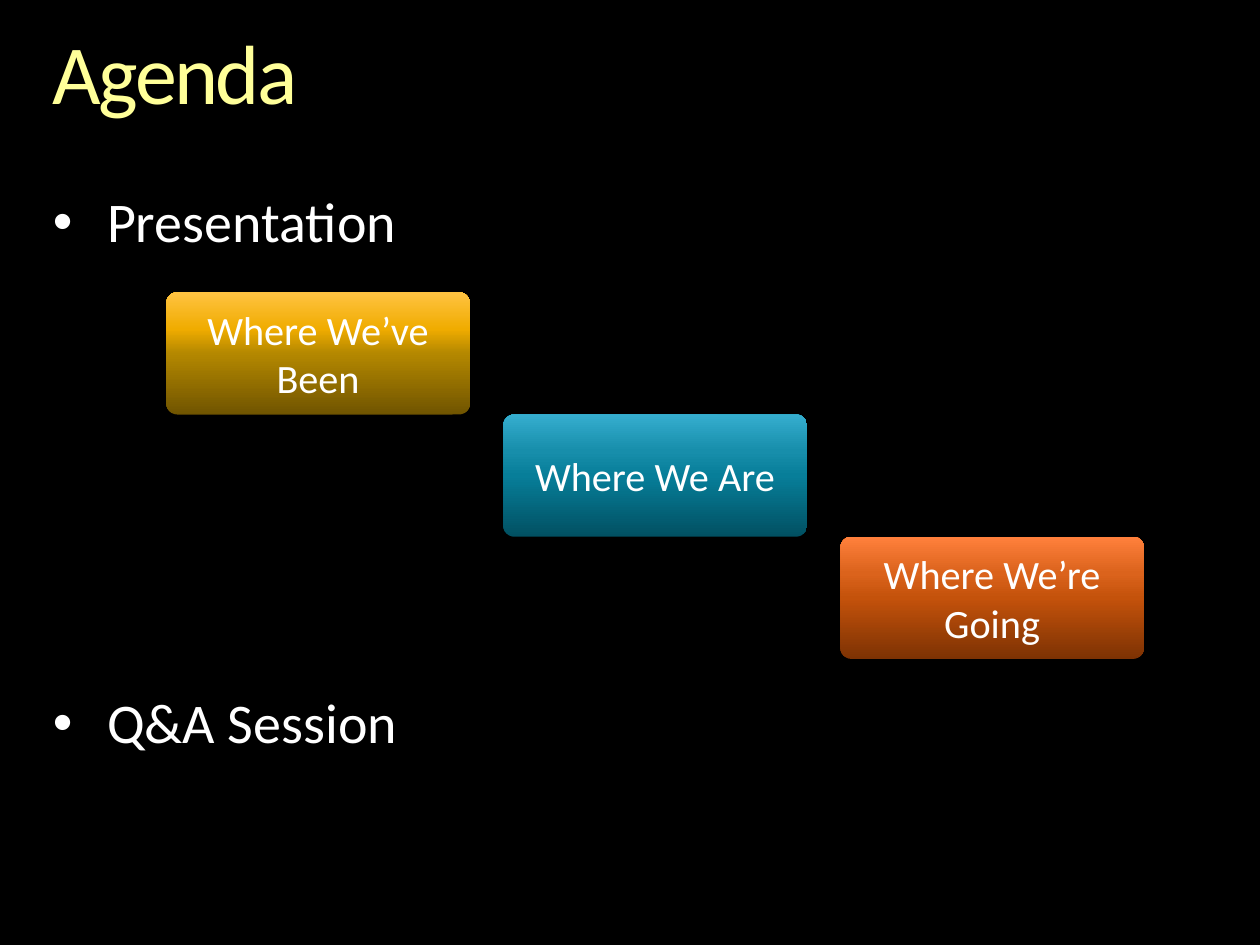
from copy import deepcopy

from pptx import Presentation
from pptx.dml.color import RGBColor
from pptx.enum.shapes import MSO_SHAPE
from pptx.enum.text import MSO_ANCHOR, MSO_AUTO_SIZE, PP_ALIGN
from pptx.oxml.ns import qn
from pptx.util import Inches, Pt

ROUNDED = MSO_SHAPE.ROUNDED_RECTANGLE
TOP, MIDDLE = MSO_ANCHOR.TOP, MSO_ANCHOR.MIDDLE
LEFT, CENTER = PP_ALIGN.LEFT, PP_ALIGN.CENTER
NO_FIT = MSO_AUTO_SIZE.NONE

FONT = "Calibri"
COLORS = {"background": "000000", "title": "FFFF99", "text": "FFFFFF"}

TITLE = "Agenda"
TOPICS = [("Presentation", 0), ("Q&A Session", 252)]  # text, space before in points
STEPS = [  # text, gradient from bottom to top
    ("Where We’ve Been", ("705400", "B48800", "F0AC00", "FFC342")),
    ("Where We Are", ("015062", "077E99", "178EAB", "35ADCE")),
    ("Where We’re Going", ("7D3203", "C4520B", "DB631C", "FF803C")),
]
STOPS = (0, 0.5, 0.7, 1)

MARGIN, CONTENT_WIDTH = 0.42, 9.17
STEP_LEFT, STEP_TOP = 1.32, 2.32
STEP_WIDTH, STEP_HEIGHT = 2.41, 0.97
STEP_SHIFT = 2.675


def place(placeholder, top, height):
    placeholder.left, placeholder.top = Inches(MARGIN), Inches(top)
    placeholder.width, placeholder.height = Inches(CONTENT_WIDTH), Inches(height)
    frame = placeholder.text_frame
    frame.margin_left = frame.margin_top = frame.margin_right = frame.margin_bottom = 0
    frame.vertical_anchor = TOP
    frame.auto_size = NO_FIT
    frame.word_wrap = True
    return frame


def style(para, size, color, align):
    para.alignment = align
    para.font.name = FONT
    para.font.size = Pt(size)
    para.font.color.rgb = RGBColor.from_string(COLORS[color])


def add_bullet(para, indent):
    properties = para._p.get_or_add_pPr()
    properties.set("marL", str(Inches(indent)))
    properties.set("indent", str(-Inches(indent)))
    bullet = properties.makeelement(qn("a:buChar"), {"char": "•"})
    properties.append(bullet)


def fill_gradient(shape, colors):
    """Fill upwards with one colour for each position in STOPS."""
    fill = shape.fill
    fill.gradient()
    fill.gradient_angle = 90
    stop_list = shape._element.spPr.find(".//" + qn("a:gsLst"))
    while len(stop_list) < len(colors):
        stop_list.append(deepcopy(stop_list[0]))
    for stop, position, color in zip(fill.gradient_stops, STOPS, colors):
        stop.position = position
        stop.color.rgb = RGBColor.from_string(color)


def add_step(page, index, text, colors):
    box = page.shapes.add_shape(
        ROUNDED,
        Inches(STEP_LEFT + index * STEP_SHIFT), Inches(STEP_TOP + index * STEP_HEIGHT),
        Inches(STEP_WIDTH), Inches(STEP_HEIGHT))
    box.adjustments[0] = 0.09
    box.shadow.inherit = False
    box.line.fill.background()
    fill_gradient(box, colors)
    frame = box.text_frame
    frame.word_wrap = True
    frame.vertical_anchor = MIDDLE
    frame.text = text
    style(frame.paragraphs[0], 23, "text", CENTER)


def main():
    deck = Presentation()
    deck.slide_width, deck.slide_height = Inches(10), Inches(7.5)
    page = deck.slides.add_slide(deck.slide_layouts[1])
    page.background.fill.solid()
    page.background.fill.fore_color.rgb = RGBColor.from_string(COLORS["background"])

    title = place(page.shapes.title, 0.25, 0.73)
    title.text = TITLE
    heading = title.paragraphs[0]
    heading.line_spacing = 0.9
    style(heading, 48, "title", LEFT)
    heading.runs[0].font._element.set("spc", "-150")

    body = place(page.placeholders[1], 1.54, 4.63)
    body.text = "\n".join(text for text, _ in TOPICS)
    for para, (_, space) in zip(body.paragraphs, TOPICS):
        para.line_spacing = 0.9
        para.space_before = Pt(space)
        add_bullet(para, 0.43)
        style(para, 32, "text", LEFT)

    for index, (text, colors) in enumerate(STEPS):
        add_step(page, index, text, colors)

    deck.save("out.pptx")


if __name__ == "__main__":
    main()
